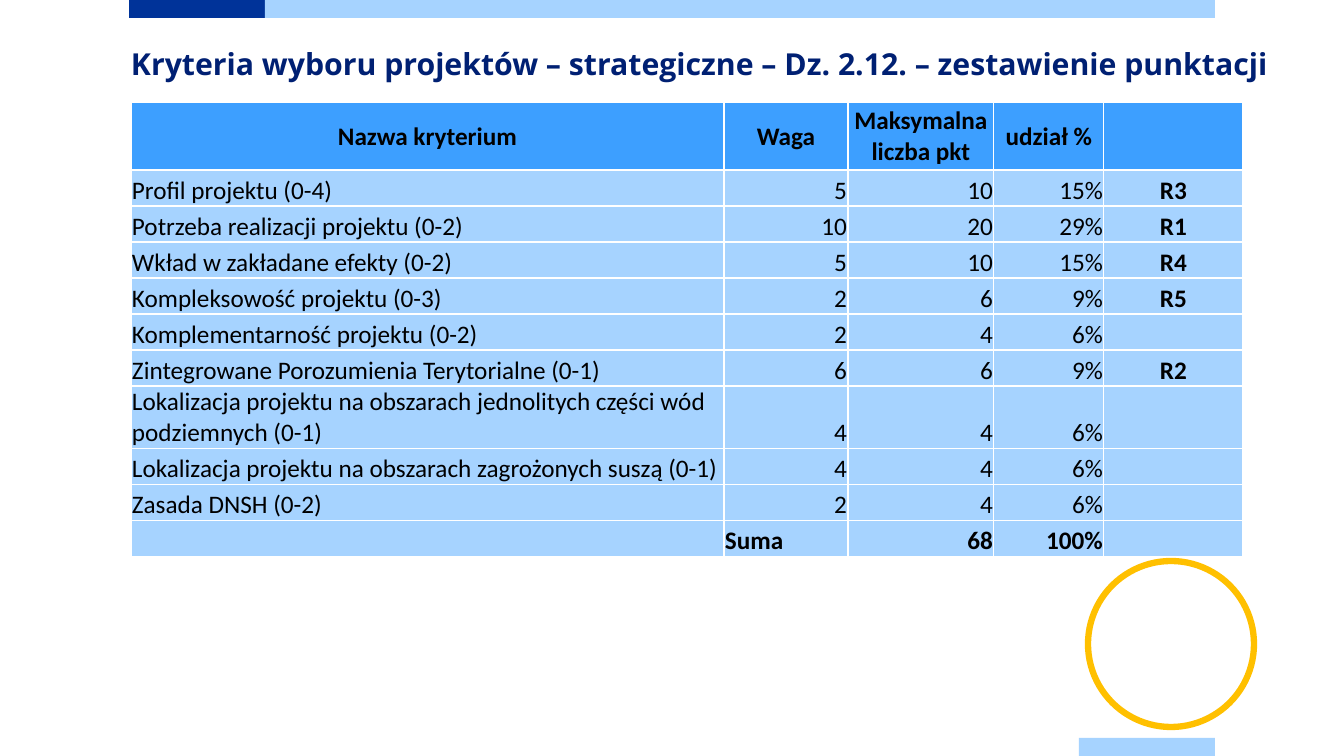
import pptx
import pptx.util
import pptx.dml.color
import pptx.enum.shapes
import pptx.enum.text
import pptx.oxml
from dataclasses import dataclass

PX = 914400 / 100.8
ALIGN = pptx.enum.text.PP_ALIGN
ANCHOR = pptx.enum.text.MSO_ANCHOR
SHAPE = pptx.enum.shapes.MSO_SHAPE


@dataclass(frozen=True)
class Theme:
    navy: str = "003399"
    title: str = "002073"
    light: str = "A6D3FF"
    header: str = "3D9FFF"
    gold: str = "FFC000"
    black: str = "000000"
    white: str = "FFFFFF"
    title_font: str = "Open Sans"
    table_font: str = "Calibri"
    title_size: float = 21.6
    table_size: float = 18


theme = Theme()


def px(*lengths):
    return [pptx.util.Emu(round(length * PX)) for length in lengths]


def add_span(para, text, font, size, color, bold):
    span = para.add_run()
    span.text = text
    span.font.name = font
    span.font.size = pptx.util.Pt(size)
    span.font.bold = bold
    span.font.color.rgb = pptx.dml.color.RGBColor.from_string(color)


deck = pptx.Presentation()
deck.slide_width, deck.slide_height = px(1344, 756)
page = deck.slides.add_slide(deck.slide_layouts[5])

# Bars at the top and bottom edges
for left, top, width, color in (
    (129, 0, 136, theme.navy),
    (265, 0, 950, theme.light),
    (1079, 738, 136, theme.light),
):
    bar = page.shapes.add_shape(SHAPE.RECTANGLE, *px(left, top, width, 18))
    bar.shadow.inherit = False
    bar.fill.solid()
    bar.fill.fore_color.rgb = pptx.dml.color.RGBColor.from_string(color)
    bar.line.fill.background()

# Title
title = page.shapes.title
title.left, title.top, title.width, title.height = px(131, 36, 1145, 58)
frame = title.text_frame
frame.margin_left = frame.margin_top = frame.margin_right = frame.margin_bottom = 0
frame.word_wrap = True
frame.auto_size = pptx.enum.text.MSO_AUTO_SIZE.NONE
frame.vertical_anchor = ANCHOR.TOP
para = frame.paragraphs[0]
para.alignment = ALIGN.LEFT
para.line_spacing = pptx.util.Pt(32.7)
add_span(para, "Kryteria wyboru projektów – strategiczne – Dz. 2.12. – zestawienie punktacji",
         theme.title_font, theme.title_size, theme.title, True)

# Ring
ring = page.shapes.add_shape(SHAPE.OVAL, *px(1088, 561, 166, 166))
ring.shadow.inherit = False
ring.fill.background()
ring.line.color.rgb = pptx.dml.color.RGBColor.from_string(theme.gold)
ring.line.width = pptx.util.Pt(4.5)

# Score table
rows = [
    ("Nazwa kryterium", "Waga", "Maksymalna liczba pkt", "udział %", ""),
    ("Profil projektu (0-4)", "5", "10", "15%", "R3"),
    ("Potrzeba realizacji projektu (0-2)", "10", "20", "29%", "R1"),
    ("Wkład w zakładane efekty (0-2)", "5", "10", "15%", "R4"),
    ("Kompleksowość projektu (0-3)", "2", "6", "9%", "R5"),
    ("Komplementarność projektu (0-2)", "2", "4", "6%", ""),
    ("Zintegrowane Porozumienia Terytorialne (0-1)", "6", "6", "9%", "R2"),
    ("Lokalizacja projektu na obszarach jednolitych części wód podziemnych (0-1)",
     "4", "4", "6%", ""),
    ("Lokalizacja projektu na obszarach zagrożonych suszą (0-1)", "4", "4", "6%", ""),
    ("Zasada DNSH (0-2)", "2", "4", "6%", ""),
    ("", "Suma", "68", "100%", ""),
]
widths = [593, 124, 146, 110, 139]
heights = [68] + [36] * 6 + [62] + [36] * 3
aligns = [ALIGN.LEFT, ALIGN.RIGHT, ALIGN.RIGHT, ALIGN.RIGHT, ALIGN.CENTER]
last = len(rows) - 1

table = page.shapes.add_table(
    len(rows), len(widths), *px(131, 102, sum(widths), sum(heights))).table
for column, width in zip(table.columns, px(*widths)):
    column.width = width
for row, height in zip(table.rows, px(*heights)):
    row.height = height

for r, texts in enumerate(rows):
    for c, text in enumerate(texts):
        cell = table.cell(r, c)
        cell.margin_left, cell.margin_top, cell.margin_right, cell.margin_bottom = px(1, 1, 1, 0)
        cell.vertical_anchor = ANCHOR.MIDDLE if r == 0 else ANCHOR.BOTTOM
        # Borders come before the fill in the cell properties
        for side in ("lnL", "lnR", "lnT", "lnB"):
            cell._tc.get_or_add_tcPr().append(pptx.oxml.parse_xml(
                f'<a:{side} xmlns:a="http://schemas.openxmlformats.org/drawingml/2006/main" '
                f'w="12700"><a:solidFill><a:srgbClr val="{theme.white}"/></a:solidFill></a:{side}>'))
        cell.fill.solid()
        cell.fill.fore_color.rgb = pptx.dml.color.RGBColor.from_string(
            theme.header if r == 0 else theme.light)
        para = cell.text_frame.paragraphs[0]
        if r == 0:
            para.alignment = ALIGN.CENTER
        else:
            para.alignment = ALIGN.LEFT if text == "Suma" else aligns[c]
        if text:
            add_span(para, text, theme.table_font, theme.table_size, theme.black,
                     r in (0, last) or c == 4)

deck.save("out.pptx")
